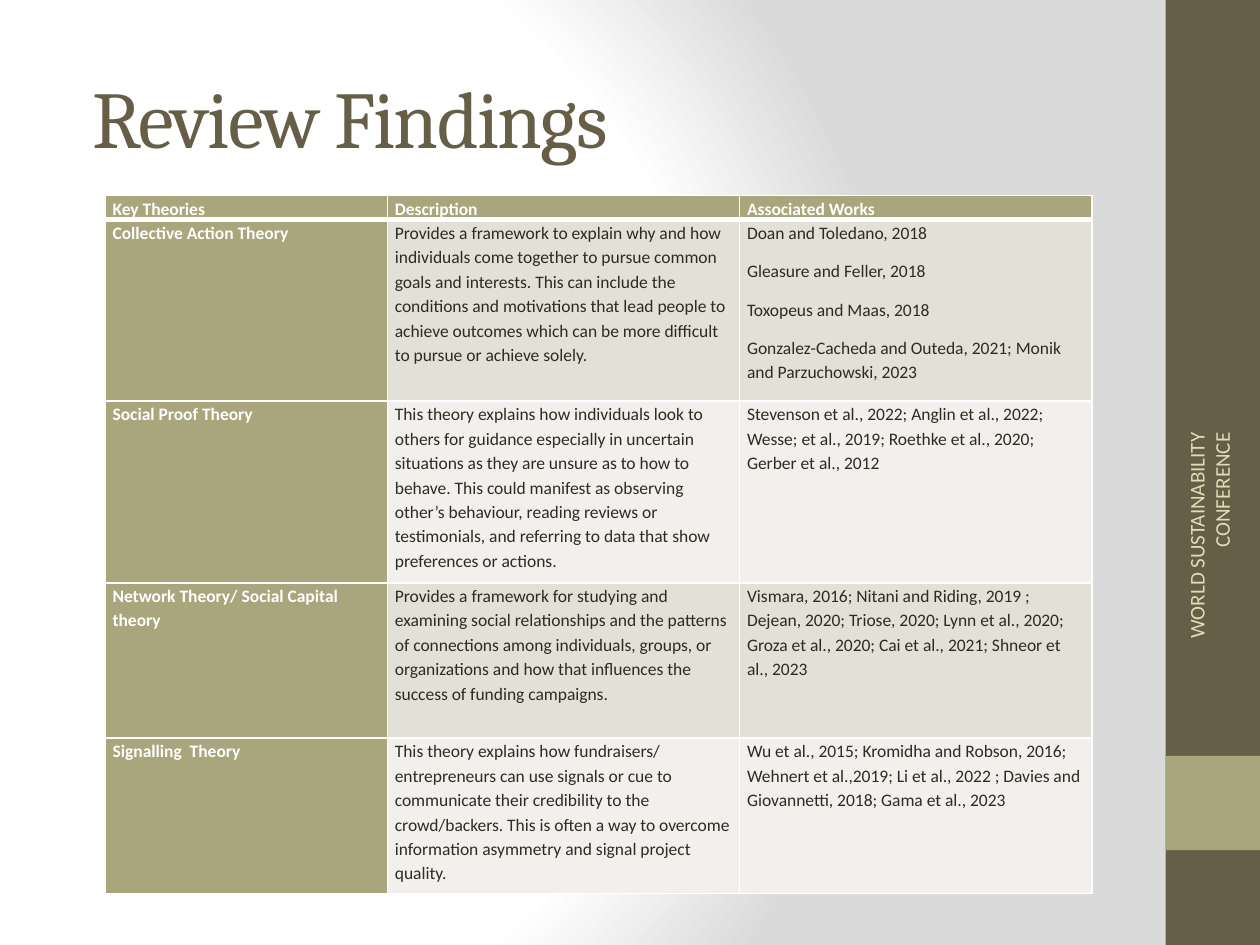
"""Builds the Review Findings slide with its table of crowdfunding theories."""
from dataclasses import dataclass

from pptx import Presentation
from pptx.dml.color import RGBColor
from pptx.enum.shapes import MSO_SHAPE
from pptx.enum.text import MSO_ANCHOR, PP_ALIGN
from pptx.oxml import parse_xml
from pptx.oxml.ns import nsdecls, qn
from pptx.util import Cm, Pt


@dataclass(frozen=True)
class Theme:
    brown: str = "675E47"
    olive: str = "A9A57C"
    sand: str = "DFDCB7"
    ink: str = "2F2B20"
    white: str = "FFFFFF"
    grey: str = "DADADA"
    bands: tuple = ("E2E1D7", "F1F0EC")
    heading_font: str = "Cambria"
    body_font: str = "Calibri"
    title_size: int = 46
    footer_size: int = 12
    table_size: int = 10


THEME = Theme()
COLUMN_WIDTHS = (5.69, 7.1, 7.1)
ROW_HEIGHTS = (0.48, 3.66, 3.66, 3.13, 3.13)
THEORIES = (
    ("Key Theories", "Description", "Associated Works"),
    (
        "Collective Action Theory",
        "Provides a framework to explain why and how individuals come together to pursue "
        "common goals and interests. This can include the conditions and motivations that "
        "lead people to achieve outcomes which can be more difficult to pursue or achieve "
        "solely.",
        "Doan and Toledano, 2018\nGleasure and Feller, 2018\nToxopeus and Maas, 2018\n"
        "Gonzalez-Cacheda and Outeda, 2021; Monik and Parzuchowski, 2023",
    ),
    (
        "Social Proof Theory",
        "This theory explains how individuals look to others for guidance especially in "
        "uncertain situations as they are unsure as to how to behave. This could manifest "
        "as observing other’s behaviour, reading reviews or testimonials, and referring to "
        "data that show preferences or actions.",
        "Stevenson et al., 2022; Anglin et al., 2022; Wesse; et al., 2019; "
        "Roethke et al., 2020; Gerber et al., 2012",
    ),
    (
        "Network Theory/ Social Capital theory",
        "Provides a framework for studying and examining social relationships and the "
        "patterns of connections among individuals, groups, or organizations and how that "
        "influences the success of funding campaigns.",
        "Vismara, 2016; Nitani and Riding, 2019 ; Dejean, 2020; Triose, 2020; "
        "Lynn et al., 2020; Groza et al., 2020; Cai et al., 2021; Shneor et al., 2023",
    ),
    (
        "Signalling  Theory",
        "This theory explains how fundraisers/ entrepreneurs can use signals or cue to "
        "communicate their credibility to the crowd/backers. This is often a way to "
        "overcome information asymmetry and signal project quality.",
        "Wu et al., 2015; Kromidha and Robson, 2016; Wehnert et al.,2019; "
        "Li et al., 2022 ; Davies and Giovannetti, 2018; Gama et al., 2023",
    ),
)


def set_background(slide):
    stops = "".join(
        f'<a:gs pos="{position}"><a:srgbClr val="{color}"/></a:gs>'
        for position, color in ((0, THEME.white), (75000, THEME.white), (100000, THEME.grey))
    )
    background = parse_xml(
        f'<p:bg {nsdecls("p", "a")}><p:bgPr><a:gradFill rotWithShape="1">'
        f'<a:gsLst>{stops}</a:gsLst><a:path path="circle">'
        '<a:fillToRect l="20000" t="50000" r="100000" b="50000"/></a:path>'
        "</a:gradFill><a:effectLst/></p:bgPr></p:bg>"
    )
    slide.element.find(qn("p:cSld")).insert(0, background)


def format_text(text_frame, font_name, size, color, bold=False):
    for paragraph in text_frame.paragraphs:
        for run in paragraph.runs:
            run.font.name = font_name
            run.font.size = Pt(size)
            run.font.bold = bold
            run.font.color.rgb = RGBColor.from_string(color)


def add_band(slide, top, height, color):
    shape = slide.shapes.add_shape(
        MSO_SHAPE.RECTANGLE, Cm(23.5), Cm(top), Cm(1.9), Cm(height)
    )
    shape.shadow.inherit = False
    shape.fill.solid()
    shape.fill.fore_color.rgb = RGBColor.from_string(color)
    shape.line.fill.background()


def add_text(slide, text, left, top, width, height, font_name, size, color):
    shape = slide.shapes.add_textbox(Cm(left), Cm(top), Cm(width), Cm(height))
    text_frame = shape.text_frame
    text_frame.word_wrap = True
    text_frame.vertical_anchor = MSO_ANCHOR.MIDDLE
    text_frame.text = text
    format_text(text_frame, font_name, size, color)
    return shape


def add_title(slide):
    shape = add_text(slide, "Review Findings", 1.27, 0.76, 21.16, 3.18,
                     THEME.heading_font, THEME.title_size, THEME.brown)
    shape.text_frame.margin_left = Cm(0.6)
    run = shape.text_frame.paragraphs[0].runs[0]
    run.font._element.set("spc", "-100")


def add_footer(slide):
    shape = add_text(slide, "WORLD SUSTAINABILITY CONFERENCE", 21.08, 11.25, 6.58, 1.02,
                     THEME.body_font, THEME.footer_size, THEME.sand)
    shape.rotation = 270
    shape.text_frame.paragraphs[0].alignment = PP_ALIGN.RIGHT


def set_borders(cell, row_index):
    widths = {"L": 1, "R": 1, "T": 3 if row_index == 1 else 1, "B": 3 if row_index == 0 else 1}
    properties = cell._tc.get_or_add_tcPr()
    for side, width in widths.items():
        properties.append(parse_xml(
            f'<a:ln{side} {nsdecls("a")} w="{Pt(width)}"><a:solidFill>'
            f'<a:srgbClr val="{THEME.white}"/></a:solidFill></a:ln{side}>'
        ))


def fill_cell(cell, text, row_index, column_index):
    is_heading = row_index == 0 or column_index == 0
    cell.margin_left = cell.margin_right = Cm(0.15)
    cell.margin_top = cell.margin_bottom = 0
    set_borders(cell, row_index)
    cell.fill.solid()
    cell.fill.fore_color.rgb = RGBColor.from_string(
        THEME.olive if is_heading else THEME.bands[(row_index - 1) % 2]
    )
    cell.text_frame.text = text
    for paragraph in cell.text_frame.paragraphs:
        paragraph.line_spacing = 1.15
        paragraph.space_after = Pt(8)
    format_text(cell.text_frame, THEME.body_font, THEME.table_size,
                THEME.white if is_heading else THEME.ink, is_heading)


def add_theory_table(slide):
    table = slide.shapes.add_table(
        len(THEORIES), len(COLUMN_WIDTHS), Cm(2.12), Cm(3.94),
        Cm(sum(COLUMN_WIDTHS)), Cm(sum(ROW_HEIGHTS)),
    ).table
    for column, width in zip(table.columns, COLUMN_WIDTHS):
        column.width = Cm(width)
    for row_index, (row, height) in enumerate(zip(table.rows, ROW_HEIGHTS)):
        row.height = Cm(height)
        for column_index, text in enumerate(THEORIES[row_index]):
            fill_cell(row.cells[column_index], text, row_index, column_index)


def main():
    presentation = Presentation()
    presentation.slide_width = Cm(25.4)
    presentation.slide_height = Cm(19.05)
    slide = presentation.slides.add_slide(presentation.slide_layouts[6])
    set_background(slide)
    add_band(slide, 0, 19.05, THEME.brown)
    add_band(slide, 15.24, 1.9, THEME.olive)
    add_title(slide)
    add_theory_table(slide)
    add_footer(slide)
    presentation.save("out.pptx")


if __name__ == "__main__":
    main()
